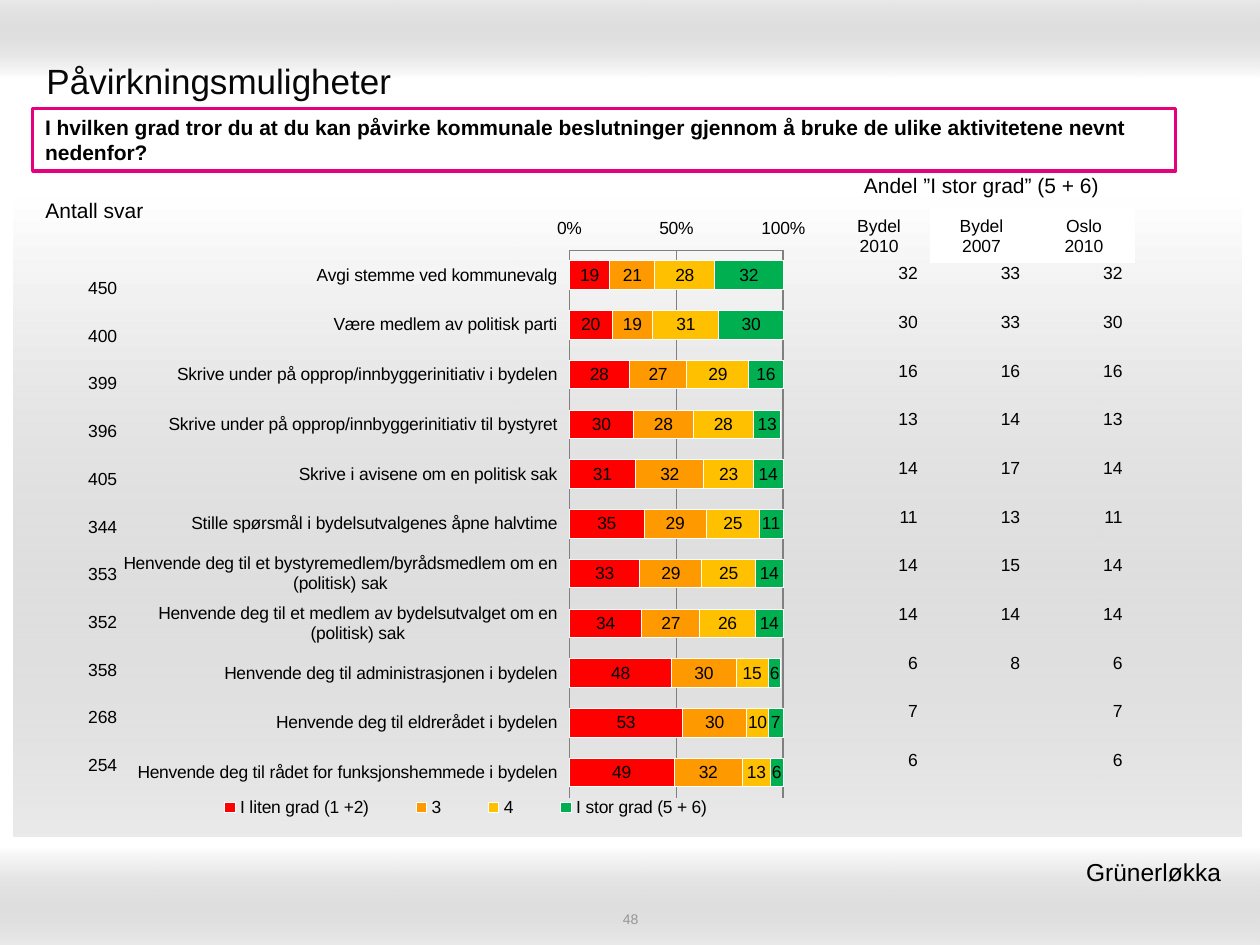
from dataclasses import dataclass

from lxml import etree
from pptx import Presentation
from pptx.chart.data import CategoryChartData
from pptx.dml.color import RGBColor
from pptx.enum.chart import XL_CHART_TYPE, XL_LEGEND_POSITION, XL_TICK_LABEL_POSITION, XL_TICK_MARK
from pptx.enum.shapes import MSO_SHAPE
from pptx.enum.text import MSO_ANCHOR, PP_ALIGN
from pptx.oxml import parse_xml
from pptx.oxml.ns import nsdecls, qn
from pptx.util import Inches, Pt

LEFT, CENTER, RIGHT = PP_ALIGN.LEFT, PP_ALIGN.CENTER, PP_ALIGN.RIGHT
TOP, MIDDLE = MSO_ANCHOR.TOP, MSO_ANCHOR.MIDDLE
RECTANGLE = MSO_SHAPE.RECTANGLE
STACKED_BAR = XL_CHART_TYPE.BAR_STACKED
LEGEND_BOTTOM = XL_LEGEND_POSITION.BOTTOM
LABELS_LOW = XL_TICK_LABEL_POSITION.LOW
TICK_NONE, TICK_INSIDE = XL_TICK_MARK.NONE, XL_TICK_MARK.INSIDE

FONT = "Arial"
BLACK = RGBColor(0x00, 0x00, 0x00)
WHITE = RGBColor(0xFF, 0xFF, 0xFF)
INK = RGBColor(0x08, 0x08, 0x08)
PALE_GRAY = RGBColor(0x96, 0x96, 0x96)
GRID_GRAY = RGBColor(0x80, 0x80, 0x80)
PINK = RGBColor(0xE7, 0x00, 0x7E)
RED = RGBColor(0xFF, 0x00, 0x00)
ORANGE = RGBColor(0xFF, 0x99, 0x00)
YELLOW = RGBColor(0xFF, 0xC0, 0x00)
GREEN = RGBColor(0x00, 0xB0, 0x50)
PLAIN_TABLE_STYLE = "{2D5ABB26-0587-4C30-8999-92F81FD0307C}"


@dataclass(frozen=True)
class Box:
    left: float
    top: float
    width: float
    height: float

    def lengths(self):
        return [Inches(value) for value in (self.left, self.top, self.width, self.height)]


@dataclass(frozen=True)
class Band:
    box: Box
    angle: int


@dataclass(frozen=True)
class Answer:
    name: str
    color: RGBColor
    values: tuple


@dataclass(frozen=True)
class Activity:
    name: str
    replies: int
    shares: tuple


BANDS = [
    Band(Box(0, 0, 10, 0.62), 270),
    Band(Box(0, 6.72, 10, 0.78), 90),
    Band(Box(0.11, 1.56, 9.74, 5.08), 90),
]
ACTIVITIES = [
    Activity("Avgi stemme ved kommunevalg", 450, (32, 33, 32)),
    Activity("Være medlem av politisk parti", 400, (30, 33, 30)),
    Activity("Skrive under på opprop/innbyggerinitiativ i bydelen", 399, (16, 16, 16)),
    Activity("Skrive under på opprop/innbyggerinitiativ til bystyret", 396, (13, 14, 13)),
    Activity("Skrive i avisene om en politisk sak", 405, (14, 17, 14)),
    Activity("Stille spørsmål i bydelsutvalgenes åpne halvtime", 344, (11, 13, 11)),
    Activity("Henvende deg til et bystyremedlem/byrådsmedlem om en (politisk) sak", 353, (14, 15, 14)),
    Activity("Henvende deg til et medlem av bydelsutvalget om en (politisk) sak", 352, (14, 14, 14)),
    Activity("Henvende deg til administrasjonen i bydelen", 358, (6, 8, 6)),
    Activity("Henvende deg til eldrerådet i bydelen", 268, (7, "", 7)),
    Activity("Henvende deg til rådet for funksjonshemmede i bydelen", 254, (6, "", 6)),
]
ANSWERS = [
    Answer("I liten grad (1 +2)", RED, (19, 20, 28, 30, 31, 35, 33, 34, 48, 53, 49)),
    Answer("3", ORANGE, (21, 19, 27, 28, 32, 29, 29, 27, 30, 30, 32)),
    Answer("4", YELLOW, (28, 31, 29, 28, 23, 25, 25, 26, 15, 10, 13)),
    Answer("I stor grad (5 + 6)", GREEN, (32, 30, 16, 13, 14, 11, 14, 14, 6, 7, 6)),
]


def write_text(frame, text: str, *, size=10, color=BLACK, bold=False, align=LEFT):
    for index, line in enumerate(text.split("\n")):
        paragraph = frame.add_paragraph() if index else frame.paragraphs[0]
        paragraph.alignment = align
        run = paragraph.add_run()
        run.text = line
        run.font.name = FONT
        run.font.size = Pt(size)
        run.font.bold = bold
        run.font.color.rgb = color


def add_text_box(slide, box: Box, text: str, *, anchor=TOP, **text_format):
    frame = slide.shapes.add_textbox(*box.lengths()).text_frame
    frame.word_wrap = True
    frame.vertical_anchor = anchor
    write_text(frame, text, **text_format)


def add_band(slide, band: Band):
    shape = slide.shapes.add_shape(RECTANGLE, *band.box.lengths())
    shape.shadow.inherit = False
    shape.line.fill.background()
    shape.fill.gradient()
    properties = shape._element.spPr
    gradient = parse_xml(
        f'<a:gradFill {nsdecls("a")} rotWithShape="1"><a:gsLst>'
        '<a:gs pos="0"><a:srgbClr val="FFFFFF"/></a:gs>'
        '<a:gs pos="100000"><a:srgbClr val="999999"><a:alpha val="20000"/></a:srgbClr></a:gs>'
        f'</a:gsLst><a:lin ang="{band.angle * 60000}" scaled="0"/></a:gradFill>'
    )
    properties.replace(properties.find(qn("a:gradFill")), gradient)


def add_question(slide, box: Box, text: str):
    shape = slide.shapes.add_shape(RECTANGLE, *box.lengths())
    shape.shadow.inherit = False
    shape.fill.solid()
    shape.fill.fore_color.rgb = WHITE
    shape.line.color.rgb = PINK
    shape.line.width = Pt(2)
    shape.text_frame.word_wrap = True
    shape.text_frame.vertical_anchor = TOP
    write_text(shape.text_frame, text, size=12, bold=True)


def add_plain_table(slide, box: Box, rows: list, *, align=RIGHT, size=10):
    table = slide.shapes.add_table(len(rows), len(rows[0]), *box.lengths()).table
    table.first_row = table.horz_banding = False
    table._tbl.tblPr.find(qn("a:tableStyleId")).text = PLAIN_TABLE_STYLE
    for row, texts in enumerate(rows):
        for column, text in enumerate(texts):
            cell = table.cell(row, column)
            cell.fill.background()
            cell.vertical_anchor = MIDDLE
            cell.margin_top = cell.margin_bottom = Inches(0.03)
            write_text(cell.text_frame, str(text), align=align, size=size)
    return table


def add_share_header(slide, box: Box):
    rows = [["", "", ""], ["Bydel\n2010", "Bydel\n2007", "Oslo\n2010"]]
    table = add_plain_table(slide, box, rows, align=CENTER)
    table.rows[0].height, table.rows[1].height = Inches(0.37), Inches(0.43)
    heading = table.cell(0, 0)
    heading.merge(table.cell(0, 2))
    heading.text_frame.clear()
    write_text(heading.text_frame, "Andel ”I stor grad” (5 + 6)", size=12, align=CENTER)
    for column in (1, 2):
        fill = table.cell(1, column).fill
        fill.solid()
        fill.fore_color.rgb = WHITE


def set_layout(element, box: Box, inner=False):
    for old in element.findall(qn("c:layout")):
        element.remove(old)
    layout = etree.Element(qn("c:layout"))
    manual = etree.SubElement(layout, qn("c:manualLayout"))
    settings = [("layoutTarget", "inner")] if inner else []
    settings += [("xMode", "edge"), ("yMode", "edge"), ("x", box.left), ("y", box.top), ("w", box.width), ("h", box.height)]
    for name, value in settings:
        etree.SubElement(manual, qn(f"c:{name}")).set("val", str(value))
    element.insert(0 if inner else 1, layout)


def add_answer_chart(slide, box: Box):
    data = CategoryChartData()
    data.categories = [activity.name for activity in ACTIVITIES]
    for answer in ANSWERS:
        data.add_series(answer.name, answer.values)
    chart = slide.shapes.add_chart(STACKED_BAR, *box.lengths(), data).chart
    chart.font.name, chart.font.size, chart.font.color.rgb = FONT, Pt(10), BLACK
    chart.has_title = False
    chart.has_legend = True
    chart.legend.position = LEGEND_BOTTOM
    chart.legend.include_in_layout = False
    plot = chart.plots[0]
    plot.gap_width, plot.overlap, plot.vary_by_categories = 75, 100, False
    plot.has_data_labels = True
    plot.data_labels.show_value = True
    plot.data_labels.number_format = "0"
    plot.data_labels.number_format_is_linked = False
    for series, answer in zip(plot.series, ANSWERS):
        series.format.fill.solid()
        series.format.fill.fore_color.rgb = answer.color
        series.format.line.color.rgb = WHITE
    categories, values = chart.category_axis, chart.value_axis
    categories.reverse_order = True
    categories.major_tick_mark = TICK_NONE
    values.major_tick_mark = TICK_INSIDE
    values.minimum_scale, values.maximum_scale, values.major_unit = 0, 100, 50
    values.tick_labels.number_format = "General\\%"
    values.tick_labels.number_format_is_linked = False
    values.major_gridlines.format.line.color.rgb = GRID_GRAY
    for axis in (categories, values):
        axis.tick_label_position = LABELS_LOW
        axis.format.line.color.rgb = GRID_GRAY
    set_layout(chart._chartSpace.chart.plotArea, Box(0.64, 0.07, 0.31, 0.85), inner=True)
    set_layout(chart.legend._element, Box(0.08, 0.92, 0.82, 0.03))


def main():
    """Build the slide on how residents rate their influence."""
    presentation = Presentation()
    presentation.slide_width, presentation.slide_height = Inches(10), Inches(7.5)
    slide = presentation.slides.add_slide(presentation.slide_layouts[6])
    for band in BANDS:
        add_band(slide, band)
    add_text_box(slide, Box(0.27, 0.36, 9.45, 0.55), "Påvirkningsmuligheter", size=20, color=INK, anchor=MIDDLE)
    add_text_box(slide, Box(3.42, 7.22, 3.17, 0.14), "48", size=8, color=PALE_GRAY, align=CENTER, anchor=MIDDLE)
    add_question(slide, Box(0.26, 0.86, 9.07, 0.5), "I hvilken grad tror du at du kan påvirke kommunale beslutninger gjennom å bruke de ulike aktivitetene nevnt nedenfor?")
    add_answer_chart(slide, Box(0.98, 1.63, 5.51, 5.11))
    add_plain_table(slide, Box(6.57, 1.98, 2.44, 4.25), [activity.shares for activity in ACTIVITIES])
    add_share_header(slide, Box(6.57, 1.29, 2.44, 0.8))
    add_plain_table(slide, Box(0.51, 2.1, 0.52, 4.17), [[activity.replies] for activity in ACTIVITIES])
    add_plain_table(slide, Box(0.04, 1.38, 1.42, 0.59), [["Antall svar"]], align=CENTER, size=12)
    add_text_box(slide, Box(6.1, 6.75, 3.69, 0.34), "Grünerløkka", size=14, align=RIGHT)
    presentation.save("out.pptx")


if __name__ == "__main__":
    main()
